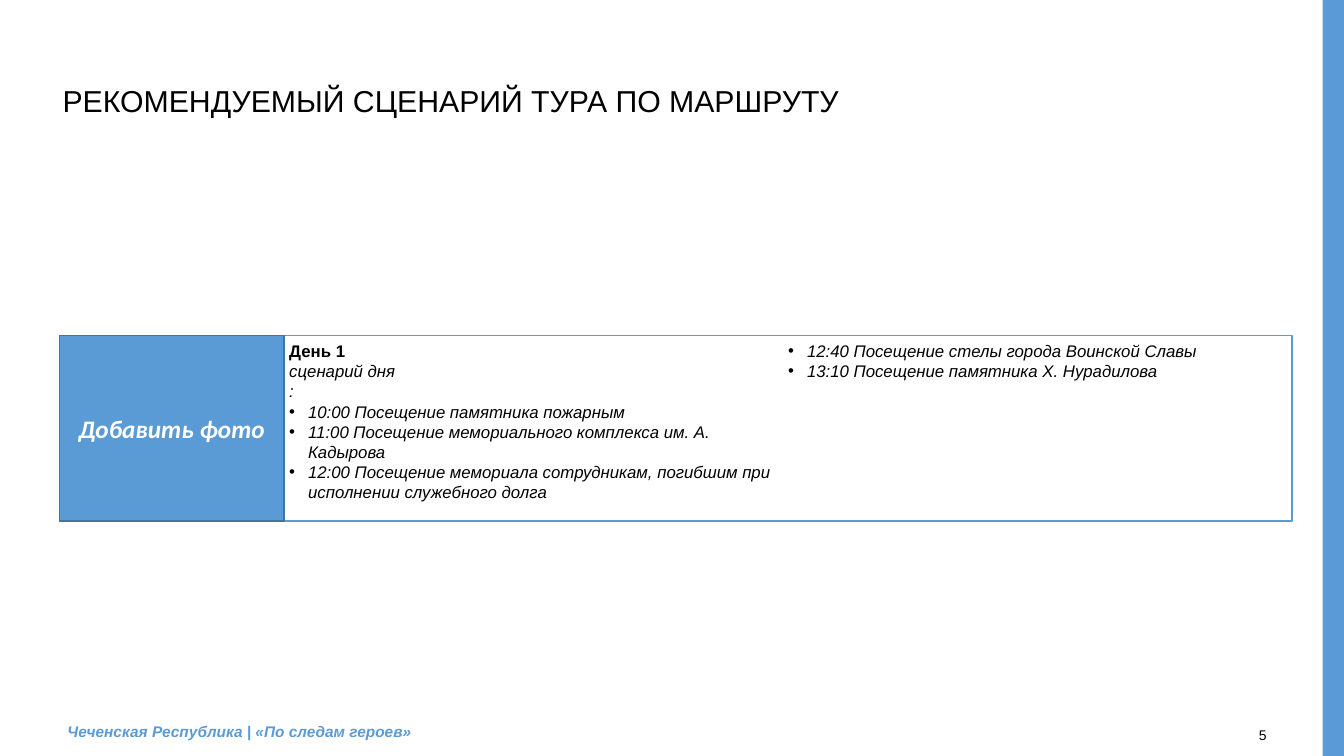
from dataclasses import dataclass

from lxml.etree import SubElement
from pptx import Presentation
from pptx.dml.color import RGBColor
from pptx.enum.shapes import MSO_SHAPE
from pptx.enum.text import MSO_ANCHOR, MSO_AUTO_SIZE, PP_ALIGN
from pptx.oxml.ns import qn
from pptx.util import Pt


@dataclass(frozen=True)
class Theme:
    accent: str = "5B9BD5"
    accent_dark: str = "43739E"
    ink: str = "000000"
    paper: str = "FFFFFF"
    font: str = "Arial"
    photo_font: str = "Calibri"
    title_size: float = 21.6
    photo_size: float = 18
    body_size: float = 12
    footer_size: float = 11
    number_size: float = 10


THEME = Theme()
LEFT, PANEL_TOP, PANEL_HEIGHT = 42.5, 239.8, 132.5
PHOTO_WIDTH, SCHEDULE_WIDTH = 160.5, 720
BULLET_INDENT = 13.5

DAY = "День 1"
DAY_NOTES = ["сценарий дня", ":"]
STOPS = [
    "10:00 Посещение памятника пожарным",
    "11:00 Посещение мемориального комплекса им. А. Кадырова",
    "12:00 Посещение мемориала сотрудникам, погибшим при исполнении служебного долга",
    "12:40 Посещение стелы города Воинской Славы",
    "13:10 Посещение памятника Х. Нурадилова",
]


def color(value):
    return RGBColor.from_string(value)


def place(shape, left, top, width, height):
    shape.left, shape.top = Pt(left), Pt(top)
    shape.width, shape.height = Pt(width), Pt(height)


def set_frame(shape, inset, anchor=MSO_ANCHOR.TOP):
    frame = shape.text_frame
    frame.word_wrap = True
    frame.auto_size = MSO_AUTO_SIZE.NONE
    frame.vertical_anchor = anchor
    frame.margin_left = frame.margin_right = Pt(inset)
    frame.margin_top = frame.margin_bottom = Pt(inset)
    return frame


def paint(shape, fill, line=None):
    shape.fill.solid()
    shape.fill.fore_color.rgb = color(fill)
    if line:
        shape.line.color.rgb = color(line)
        shape.line.width = Pt(1)
    else:
        shape.line.fill.background()


def add_span(para, text, size, ink=THEME.ink, font=THEME.font, bold=False, italic=False):
    span = para.add_run()
    span.text = text
    span.font.size, span.font.name = Pt(size), font
    span.font.bold, span.font.italic = bold, italic
    span.font.color.rgb = color(ink)


def add_box(page, left, top, width, height, fill, line=None):
    box = page.shapes.add_shape(
        MSO_SHAPE.RECTANGLE, Pt(left), Pt(top), Pt(width), Pt(height))
    box.shadow.inherit = False
    paint(box, fill, line)
    return box


def add_label(page, left, top, width, height, inset):
    """Add an empty text box and return its first paragraph."""
    box = page.shapes.add_textbox(Pt(left), Pt(top), Pt(width), Pt(height))
    return set_frame(box, inset).paragraphs[0]


def set_bullet(para, shown):
    """Give the paragraph a hanging bullet, or clear the inherited one."""
    properties = para._p.get_or_add_pPr()
    indent = Pt(BULLET_INDENT) if shown else 0
    properties.set("marL", str(indent))
    properties.set("indent", str(-indent))
    if shown:
        bullet_color = SubElement(properties, qn("a:buClr"))
        SubElement(bullet_color, qn("a:srgbClr"), val=THEME.ink)
        SubElement(properties, qn("a:buFont"), typeface=THEME.font)
        SubElement(properties, qn("a:buChar"), char="•")
    else:
        SubElement(properties, qn("a:buNone"))


def fill_title(page):
    title = page.shapes.title
    place(title, LEFT, 56.2, 854.6, 31.7)
    para = set_frame(title, 2.2, MSO_ANCHOR.MIDDLE).paragraphs[0]
    para.alignment = PP_ALIGN.LEFT
    add_span(para, "РЕКОМЕНДУЕМЫЙ СЦЕНАРИЙ ТУРА ПО МАРШРУТУ", THEME.title_size)


def fill_schedule(page):
    schedule = page.placeholders[1]
    place(schedule, LEFT + PHOTO_WIDTH, PANEL_TOP, SCHEDULE_WIDTH, PANEL_HEIGHT)
    paint(schedule, THEME.paper, THEME.accent)
    frame = set_frame(schedule, 3.6)
    frame._txBody.bodyPr.set("numCol", "2")
    for index, text in enumerate([DAY, *DAY_NOTES, *STOPS]):
        para = frame.add_paragraph() if index else frame.paragraphs[0]
        set_bullet(para, text in STOPS)
        para.space_before = Pt(0)
        add_span(para, text, THEME.body_size, bold=text == DAY, italic=text != DAY)


def add_photo_box(page):
    photo = add_box(page, LEFT, PANEL_TOP, PHOTO_WIDTH, PANEL_HEIGHT,
                    THEME.accent, THEME.accent_dark)
    para = set_frame(photo, 3.6, MSO_ANCHOR.MIDDLE).paragraphs[0]
    para.alignment = PP_ALIGN.CENTER
    add_span(para, "Добавить фото", THEME.photo_size, THEME.paper,
             THEME.photo_font, bold=True, italic=True)


def add_footer(page):
    para = add_label(page, 44.6, 511.9, 572.4, 20.9, inset=3.6)
    add_span(para, "Чеченская Республика | «По следам героев»",
             THEME.footer_size, THEME.accent, bold=True, italic=True)
    number = add_label(page, 899.3, 512.6, 10, 18, inset=0)
    number.line_spacing = 1.5
    add_span(number, "5", THEME.number_size)


def main():
    deck = Presentation()
    deck.slide_width, deck.slide_height = Pt(960), Pt(540)
    page = deck.slides.add_slide(deck.slide_layouts[1])
    add_box(page, 944.8, 0, 15.2, 540, THEME.accent)
    fill_title(page)
    fill_schedule(page)
    add_photo_box(page)
    add_footer(page)
    deck.save("out.pptx")


if __name__ == "__main__":
    main()
